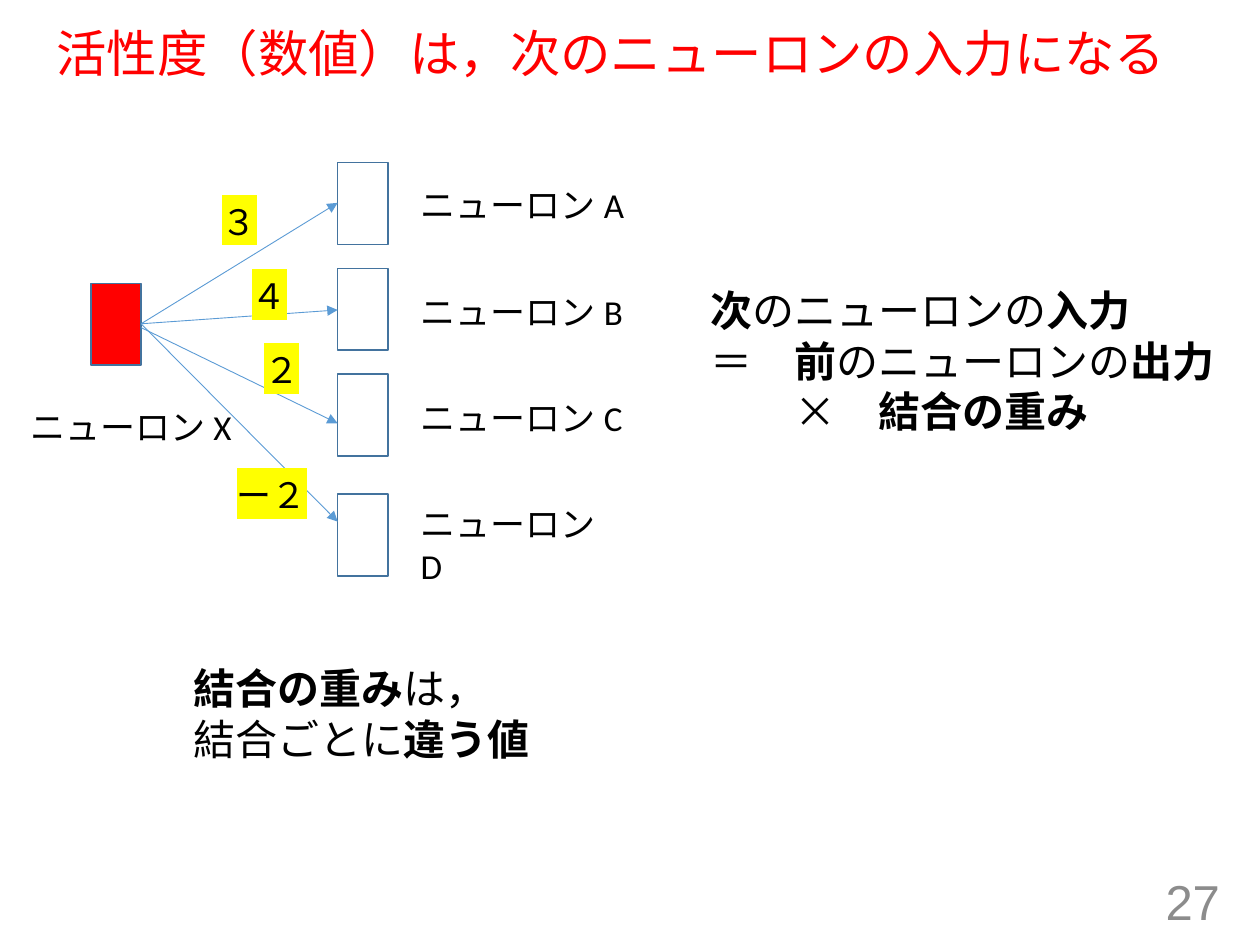
from lxml.etree import SubElement
from pptx import Presentation
from pptx.dml.color import RGBColor
from pptx.enum.shapes import MSO_CONNECTOR, MSO_SHAPE
from pptx.enum.text import MSO_ANCHOR, PP_ALIGN
from pptx.oxml.ns import qn
from pptx.util import Inches, Pt

CJK = "Noto Sans CJK JP"
TITLE = "活性度（数値）は，次のニューロンの入力になる"
PAGE = "27"
# name, box top, arrow start y, arrow end y, weight, weight left, weight width
NEURONS = [
    ("A", 1.29, 2.57, 1.61, "３", 1.66, 0.48),
    ("B", 2.13, 2.57, 2.46, "４", 1.90, 0.48),
    ("C", 2.97, 2.60, 3.36, "２", 2.00, 0.48),
    ("D", 3.92, 2.57, 4.14, "ー２", 1.78, 0.76),
]
WEIGHT_TOPS = [1.54, 2.13, 2.72, 3.71]
# Runs between asterisks are bold
FORMULA = ["*次*のニューロンの*入力*", "＝　*前*のニューロンの*出力*", "　　×　*結合の重み*"]
NOTE = ["*結合の重み*は，", "結合ごとに*違う値*"]

BOX_W, BOX_H = 0.4, 0.65
SOURCE_X, TARGET_X = 0.72, 2.68
LABEL_TOP, LABEL_STEP = 1.41, 0.843


def rgb(value):
    return RGBColor.from_string(value)


def add_text(s, lines, x, y, w, h, size, font="Calibri", color="000000",
             anchor=MSO_ANCHOR.TOP, align=PP_ALIGN.LEFT, spacing=None, highlight=None):
    tf = s.shapes.add_textbox(Inches(x), Inches(y), Inches(w), Inches(h)).text_frame
    tf.word_wrap = True
    tf.vertical_anchor = anchor
    for i, line in enumerate(lines):
        p = tf.paragraphs[0] if i == 0 else tf.add_paragraph()
        p.alignment = align
        p.line_spacing = spacing
        p.font.size, p.font.name = Pt(size), font
        p.font.color.rgb = rgb(color)
        for j, part in enumerate(line.split("*")):
            if not part:
                continue
            r = p.add_run()
            r.text = part
            if j % 2:
                r.font.bold = True
            rPr = r.font._element
            if highlight:
                SubElement(SubElement(rPr, qn("a:highlight")), qn("a:srgbClr"), val=highlight)
            SubElement(rPr, qn("a:ea"), typeface=CJK)


def add_neuron(s, x, y, fill=None):
    sp = s.shapes.add_shape(MSO_SHAPE.RECTANGLE, Inches(x), Inches(y), Inches(BOX_W), Inches(BOX_H))
    sp.shadow.inherit = False
    if fill:
        sp.fill.solid()
        sp.fill.fore_color.rgb = rgb(fill)
    else:
        sp.fill.background()
    sp.line.color.rgb = rgb("43739E")
    sp.line.width = Pt(1)


def add_arrow(s, x1, y1, x2, y2):
    c = s.shapes.add_connector(MSO_CONNECTOR.STRAIGHT, Inches(x1), Inches(y1), Inches(x2), Inches(y2))
    c.line.color.rgb = rgb("5B9BD5")
    c.line.width = Pt(0.5)
    SubElement(c.line._get_or_add_ln(), qn("a:tailEnd"), type="triangle")
    SubElement(c._element.spPr, qn("a:effectLst"))


prs = Presentation()
prs.slide_width, prs.slide_height = Inches(10), Inches(7.5)
s = prs.slides.add_slide(prs.slide_layouts[6])

add_text(s, [TITLE], 0.35, 0.19, 9.25, 0.51, 28.8, "Arial", "FF0000", MSO_ANCHOR.MIDDLE, spacing=0.9)
add_text(s, [PAGE], 7.53, 6.95, 2.25, 0.4, 28, "Arial", "8C8C8C", MSO_ANCHOR.MIDDLE, PP_ALIGN.RIGHT)

add_neuron(s, SOURCE_X, 2.25, "FF0000")
add_text(s, ["ニューロン X"], 0.14, 3.17, 1.81, 0.44, 20)
for i, (name, top, start, end, *_) in enumerate(NEURONS):
    add_neuron(s, TARGET_X, top)
    add_arrow(s, SOURCE_X + BOX_W, start, TARGET_X, end)
    add_text(s, [f"ニューロン {name}"], 3.24, LABEL_TOP + i * LABEL_STEP, 1.82, 0.44, 20)
for (*_, weight, left, width), top in zip(NEURONS, WEIGHT_TOPS):
    add_text(s, [weight], left, top, width, 0.44, 20, highlight="FFFF00")

add_text(s, FORMULA, 5.54, 2.21, 4.24, 1.31, 24, CJK)
add_text(s, NOTE, 1.44, 5.21, 2.89, 0.91, 24, CJK)
prs.save("out.pptx")
